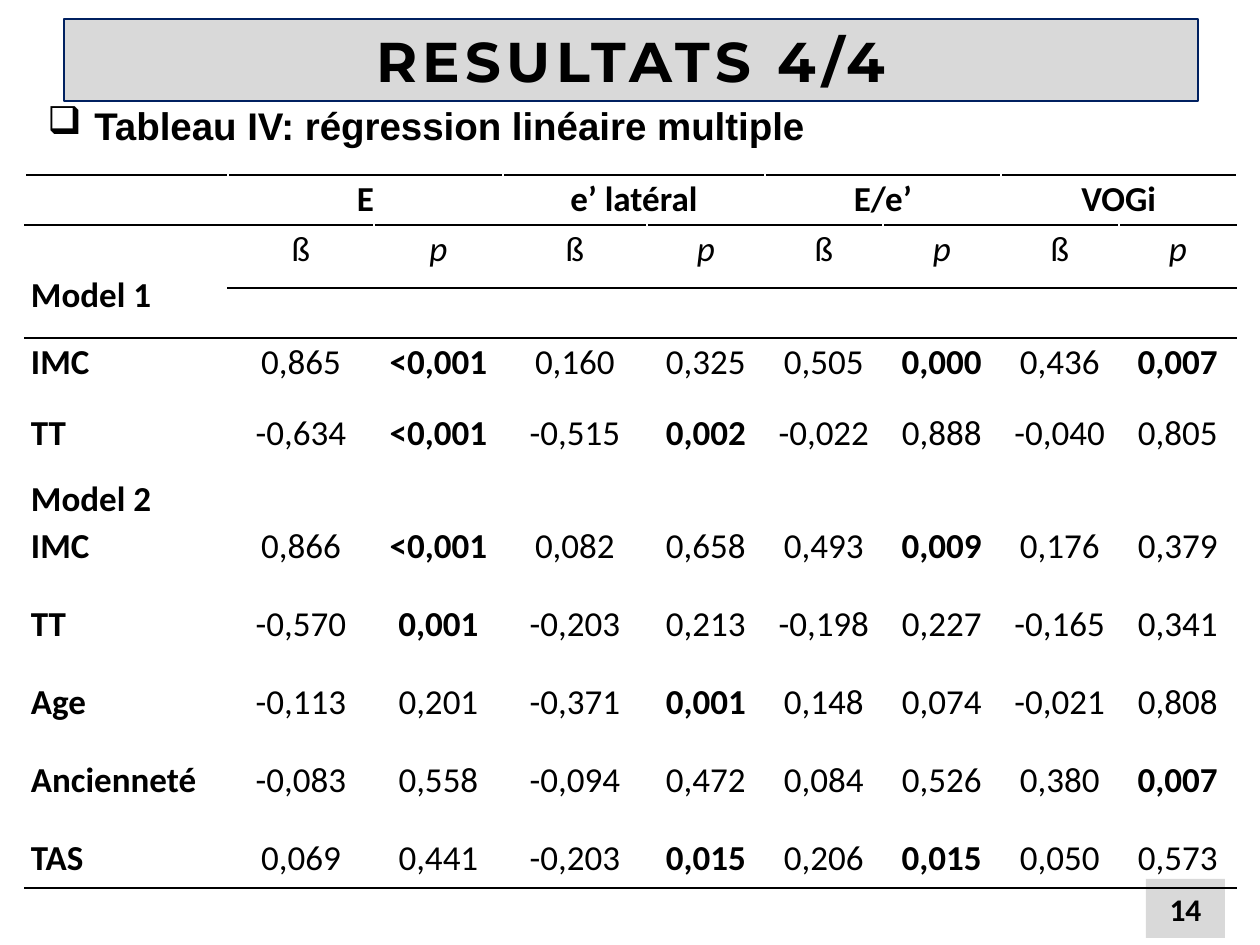
from lxml import etree
from pptx import Presentation
from pptx.dml.color import RGBColor
from pptx.enum.shapes import MSO_SHAPE
from pptx.enum.text import MSO_ANCHOR, PP_ALIGN
from pptx.oxml.ns import qn
from pptx.util import Emu, Pt

RECT = MSO_SHAPE.RECTANGLE
MIDDLE = MSO_ANCHOR.MIDDLE
LEFT, CENTER, JUSTIFY = PP_ALIGN.LEFT, PP_ALIGN.CENTER, PP_ALIGN.JUSTIFY
SCALE = 914400 // 126
HEX = {"ink": "000000", "grey": "D9D9D9", "navy": "002060"}

COLS = [203, 146, 129, 144] + [118] * 5
ROWS = [50, 63, 50, 71, 66, 47] + [78] * 4 + [54]
HEADS = ["E", "e’ latéral", "E/e’", "VOGi"]
LINE = 46
DATA = {
    3: "IMC 0,865 *<0,001 0,160 0,325 0,505 *0,000 0,436 *0,007",
    4: "TT -0,634 *<0,001 -0,515 *0,002 -0,022 0,888 -0,040 0,805",
    6: "IMC 0,866 *<0,001 0,082 0,658 0,493 *0,009 0,176 0,379",
    7: "TT -0,570 *0,001 -0,203 0,213 -0,198 0,227 -0,165 0,341",
    8: "Age -0,113 0,201 -0,371 *0,001 0,148 0,074 -0,021 0,808",
    9: "Ancienneté -0,083 0,558 -0,094 0,472 0,084 0,526 0,380 *0,007",
    10: "TAS 0,069 0,441 -0,203 *0,015 0,206 *0,015 0,050 0,573",
}


def px(num):
    """Turn px into EMU."""
    return Emu(num * SCALE)


def tint(name):
    """Give the named colour."""
    return RGBColor.from_string(HEX[name])


class Deck:
    """Hold the style and the current slide."""

    def __init__(self):
        """Open a deck with one blank slide."""
        self.prs = Presentation()
        self.prs.slide_width, self.prs.slide_height = px(1260), px(945)
        self.slide = self.prs.slides.add_slide(self.prs.slide_layouts[6])

    def text(self, para, text, size, face="Calibri", bold=True, italic=False, align=CENTER):
        """Fill a paragraph with styled text."""
        para.text, para.alignment = text, align
        font = para.font
        font.name, font.size, font.bold, font.italic = face, Pt(size), bold, italic
        font.color.rgb = tint("ink")

    def box(self, left, top, wide, high, text, size, face="Calibri", edge=None, track=0):
        """Draw a grey box with centred text."""
        shape = self.slide.shapes.add_shape(RECT, px(left), px(top), px(wide), px(high))
        shape.shadow.inherit = False
        shape.fill.solid()
        shape.fill.fore_color.rgb = tint("grey")
        if edge:
            shape.line.color.rgb = tint(edge)
            shape.line.width = Pt(1.5)
        else:
            shape.line.fill.background()
        frame = shape.text_frame
        frame.word_wrap, frame.vertical_anchor = True, MIDDLE
        para = frame.paragraphs[0]
        self.text(para, text, size, face)
        if track:
            para.runs[0]._r.get_or_add_rPr().set("spc", str(track))

    def bullet(self, left, top, wide, high, text, size, face, mark, indent):
        """Add a text box with one bulleted line."""
        frame = self.slide.shapes.add_textbox(px(left), px(top), px(wide), px(high)).text_frame
        frame.word_wrap = True
        para = frame.paragraphs[0]
        self.text(para, text, size, face, align=LEFT)
        para.space_before = Pt(size / 5)
        props = para._p.get_or_add_pPr()
        props.set("marL", str(px(indent)))
        props.set("indent", str(px(-indent)))
        sign = etree.Element(qn("a:buChar"), char=mark)
        props.find(qn("a:defRPr")).addprevious(sign)

    def grid(self, left, top, cols, rows):
        """Add a plain table of the given column widths and row heights."""
        frame = self.slide.shapes.add_table(
            len(rows), len(cols), px(left), px(top), px(sum(cols)), px(sum(rows)))
        table = frame.table
        table.first_row = table.horz_banding = False
        for col, wide in zip(table.columns, cols):
            col.width = px(wide)
        for row, high in zip(table.rows, rows):
            row.height = px(high)
        return table

    def cell(self, cell, text="", sides=(), pad=6, drop=0, **style):
        """Style one cell, with rules on the named sides."""
        cell.margin_left = cell.margin_right = px(pad)
        cell.margin_top, cell.margin_bottom = px(drop), 0
        para = cell.text_frame.paragraphs[0]
        self.text(para, text, 20, **style)
        para.line_spacing = 1.07
        props = cell._tc.get_or_add_tcPr()
        for side in sides:
            rule = etree.SubElement(props, qn(f"a:ln{side}"), w=str(Pt(1.5)))
            fill = etree.SubElement(rule, qn("a:solidFill"))
            etree.SubElement(fill, qn("a:srgbClr"), val=HEX["ink"])
        cell.fill.background()

    def save(self):
        """Save the deck."""
        self.prs.save("out.pptx")


def content(row, col):
    """Give the text and font style of a table cell."""
    if col == 0:
        name = {1: "Model 1", 5: "Model 2"}.get(row, DATA.get(row, " ").split(" ")[0])
        return name, {"align": JUSTIFY, "drop": LINE if row == 1 else 0}
    if row == 0:
        return HEADS[col // 2] if col % 2 else "", {}
    if row == 1:
        return ("ß", {"bold": False}) if col % 2 else ("p", {"bold": False, "italic": True})
    if row in DATA:
        text = DATA[row].split()[col]
        return text.lstrip("*"), {"bold": text.startswith("*")}
    return "", {}


def rules(row, col):
    """Name the ruled sides of a table cell."""
    if row == 0 or (row == 1 and col):
        return "TB"
    if row == 1 or (row == 2 and col):
        return "T"
    return "B" if row == len(ROWS) - 1 else ""


def main():
    """Build the slide."""
    deck = Deck()
    deck.box(64, 19, 1134, 82, "RESULTATS 4/4", 32, "Montserrat", "navy", 300)
    deck.bullet(35, 96, 1191, 735, "Tableau IV: régression linéaire multiple",
                22, "Arial", "❑", 47)
    deck.box(1146, 879, 79, 59, "14", 18)
    table = deck.grid(25, 175, COLS, ROWS)
    for row in range(len(ROWS)):
        for col in range(len(COLS)):
            text, style = content(row, col)
            pad = 6 if col < 5 else 9
            deck.cell(table.cell(row, col), text, rules(row, col), pad, **style)
    for col in range(1, len(COLS), 2):
        table.cell(0, col).merge(table.cell(0, col + 1))
    table.cell(1, 0).merge(table.cell(2, 0))
    deck.save()


if __name__ == "__main__":
    main()
